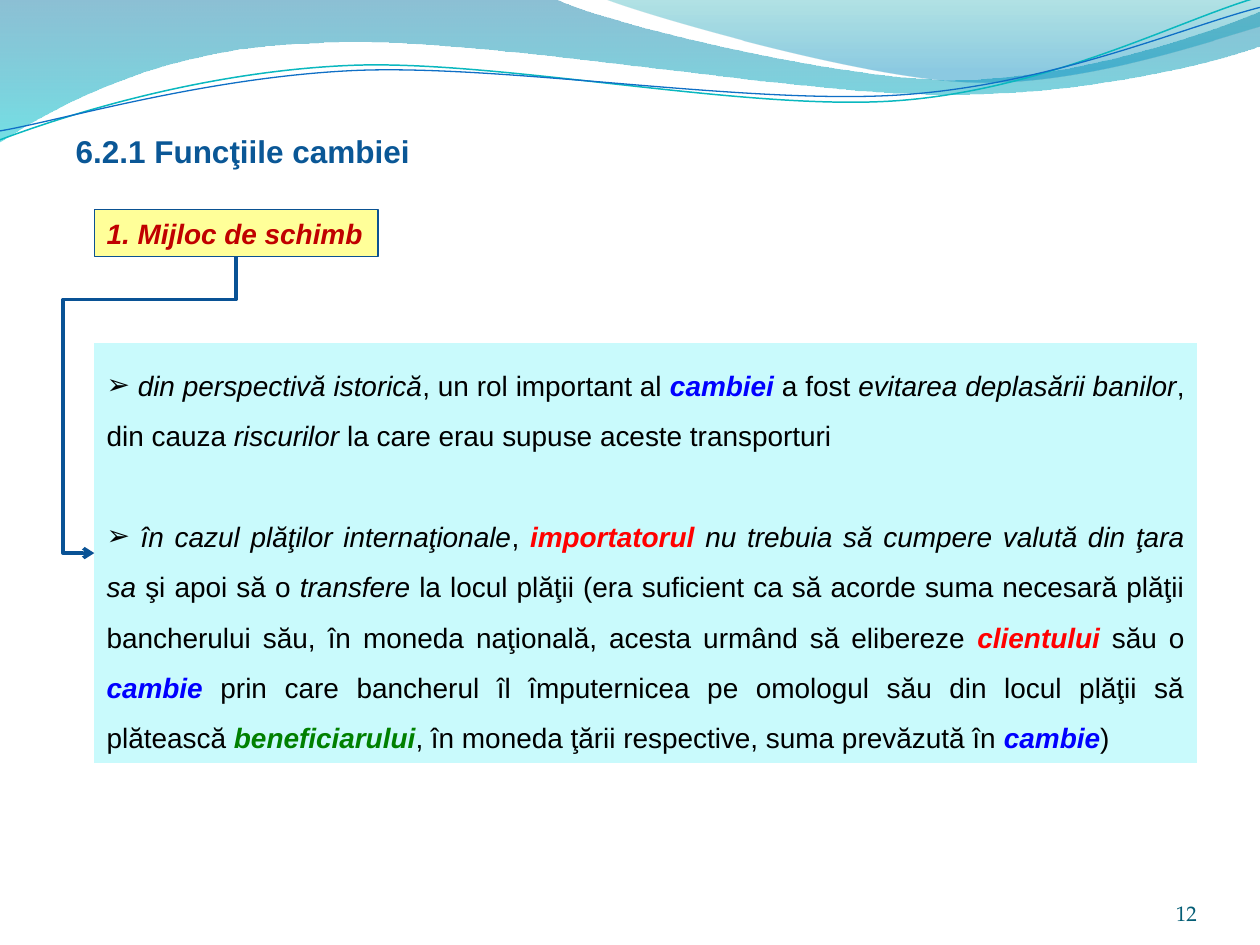
from lxml import etree
from pptx import Presentation
from pptx.dml.color import RGBColor
from pptx.enum.shapes import MSO_CONNECTOR, MSO_SHAPE
from pptx.enum.text import MSO_ANCHOR, MSO_AUTO_SIZE, PP_ALIGN
from pptx.oxml.ns import qn
from pptx.util import Cm, Pt

RECT, ELBOW = MSO_SHAPE.RECTANGLE, MSO_CONNECTOR.ELBOW
MIDDLE, BOTTOM = MSO_ANCHOR.MIDDLE, MSO_ANCHOR.BOTTOM
LEFT, RIGHT, JUSTIFY = PP_ALIGN.LEFT, PP_ALIGN.RIGHT, PP_ALIGN.JUSTIFY
GROW, FIXED = MSO_AUTO_SIZE.SHAPE_TO_FIT_TEXT, MSO_AUTO_SIZE.NONE

COLORS = {
    "title": "0A5796", "label": "C00000", "label_fill": "FFFF99", "label_line": "0B5292",
    "body_fill": "C9FAFC", "arrow": "095295", "number": "045D75", "black": "000000",
    "blue": "0000FF", "red": "FF0000", "green": "008000",
}

# Text styles: regular, italic, and bold italic in a colour
STYLES = {
    "plain": {"name": "Arial", "size": Pt(16), "bold": False, "italic": False, "color": "black"},
    "title": {"name": "Arial", "size": Pt(18), "bold": True, "italic": False, "color": "title"},
    "number": {"name": "TeX Gyre Pagella", "size": Pt(12), "color": "number"},
}
STYLES["italic"] = {**STYLES["plain"], "italic": True}
for accent in ("blue", "red", "green", "label"):
    STYLES[accent] = {**STYLES["italic"], "bold": True, "color": accent}

TITLE = [[("6.2.1 Funcţiile cambiei", "title")]]
LABEL = [[("1. Mijloc de schimb", "label")]]
NUMBER = [[("12", "number")]]
BODY = [
    [(" din perspectivă istorică", "italic"), (", un rol important al ", "plain"),
     ("cambiei", "blue"), (" a fost ", "plain"), ("evitarea deplasării banilor", "italic"),
     (", din cauza", "plain"), (" riscurilor", "italic"),
     (" la care erau supuse aceste transporturi", "plain")],
    [(" în cazul plăţilor internaţionale", "italic"), (", ", "plain"), ("importatorul ", "red"),
     ("nu trebuia să cumpere valută din ţara sa", "italic"), (" şi apoi să o ", "plain"),
     ("transfere", "italic"),
     (" la locul plăţii (era suficient ca să acorde suma necesară plăţii bancherului său, "
      "în moneda naţională, acesta urmând să elibereze ", "plain"),
     ("clientului", "red"), (" său o ", "plain"), ("cambie", "blue"),
     (" prin care bancherul îl împuternicea pe omologul său din locul plăţii "
      "să plătească ", "plain"),
     ("beneficiarului", "green"),
     (", în moneda ţării respective, suma prevăzută în ", "plain"),
     ("cambie", "blue"), (")", "plain")],
]

# Waves in cm: a pair is a straight step, six numbers are a Bézier step.
# Gradient stops are (position, colour, opacity in percent).
WAVES = [
    {"start": (0, 0), "stops": [(0, "0074A1", 45), (1, "00C6CF", 55)],
     "steps": [(11.18, -0.03), (12.09, 0.43, 16.87, 1.6, 19.25, 1.6),
               (21.67, 1.6, 24.33, 0.66, 25.4, 0.23), (25.43, 0.91),
               (24.97, 1.12, 22.1, 1.93, 18.95, 1.9), (15.8, 1.9, 9.7, 0.71, 6.53, 0.86),
               (3.28, 0.91, 1.17, 2.11, -0.03, 2.87), (0, 0)]},
    {"start": (12.17, -0.03), "stops": [(0, "00A1A9", 30), (0.8, "008BBF", 45)],
     "steps": [(12.93, 0.28, 17.32, 1.57, 19.53, 1.65),
               (21.74, 1.75, 24.41, 0.81, 25.4, 0.53), (25.4, 0), (12.17, -0.03)]},
    {"start": (0, 2.82), "line": ("0AB8BF", 0.85),
     "steps": [(1.22, 2.36, 4.01, 1.45, 7.04, 1.32), (10.03, 1.19, 15.06, 2.26, 18.11, 2.03),
               (21.16, 1.8, 23.83, 0.38, 25.35, -0.05)]},
    {"start": (0, 2.64), "line": ("0F6FC6", 0.75),
     "steps": [(1.19, 2.44, 4.17, 1.55, 7.19, 1.42), (10.24, 1.3, 15.16, 2.13, 18.21, 1.91),
               (21.23, 1.7, 23.9, 0.53, 25.4, 0.15)]},
]


def rgb(value):
    return RGBColor.from_string(COLORS.get(value, value))


def add_xml(parent, tag, **attributes):
    return etree.SubElement(parent, qn(tag), attributes)


def bend(shape, steps):
    """Join each three straight segments of a six-number step into one Bézier curve."""
    segments = iter(list(shape.element.iter(qn("a:lnTo"))))
    for step in steps:
        group = [next(segments) for _ in range(len(step) // 2)]
        if len(group) == 3:
            curve = etree.Element(qn("a:cubicBezTo"))
            group[0].addprevious(curve)
            for segment in group:
                curve.append(segment[0])
                segment.getparent().remove(segment)


def add_wave(page, wave):
    steps = wave["steps"]
    points = [(Cm(x), Cm(y)) for step in steps for x, y in zip(step[::2], step[1::2])]
    builder = page.shapes.build_freeform(*map(Cm, wave["start"]))
    builder.add_line_segments(points, close="stops" in wave)
    shape = builder.convert_to_shape()
    bend(shape, steps)
    shape.shadow.inherit = False
    if "line" in wave:
        color, width = wave["line"]
        shape.fill.background()
        shape.line.color.rgb = rgb(color)
        shape.line.width = Pt(width)
        return
    shape.line.fill.background()
    shape.fill.gradient()
    shape.fill.gradient_angle = 270
    for stop, (position, color, _) in zip(shape.fill.gradient_stops, wave["stops"]):
        stop.position = position
        stop.color.rgb = rgb(color)
    for node, (_, _, opacity) in zip(shape.element.iter(qn("a:srgbClr")), wave["stops"]):
        add_xml(node, "a:alpha", val=str(opacity * 1000))


def place(shape, box):
    shape.left, shape.top, shape.width, shape.height = map(Cm, box)


def write(shape, paragraphs, frame_format, para_format, bullet=None):
    frame = shape.text_frame
    for name, value in frame_format.items():
        setattr(frame, name, value)
    for index, spans in enumerate(paragraphs):
        para = frame.add_paragraph() if index else frame.paragraphs[0]
        for name, value in para_format.items():
            setattr(para, name, value)
        if index:
            para.space_before = Pt(28.8)
        if bullet:
            properties = para._p.get_or_add_pPr()
            add_xml(properties, "a:buFont", typeface="Arial")
            add_xml(properties, "a:buChar", char=bullet)
        for text, style in spans:
            span = para.add_run()
            span.text = text
            for name, value in STYLES[style].items():
                if name == "color":
                    span.font.color.rgb = rgb(value)
                else:
                    setattr(span.font, name, value)


def add_panel(page, box, fill, line=None):
    shape = page.shapes.add_shape(RECT, *map(Cm, box))
    shape.shadow.inherit = False
    shape.fill.solid()
    shape.fill.fore_color.rgb = rgb(fill)
    if line:
        shape.line.color.rgb = rgb(line)
        shape.line.width = Pt(0.75)
    else:
        shape.line.fill.background()
    return shape


def add_elbow(page, start, end, drop, lane):
    """Go down by drop, left to lane, down to the end's height, then right to it."""
    (x1, y1), (x2, y2) = start, end
    across, down = x1 - x2, y2 - y1
    left, top = (x1 + x2 - down) / 2, (y1 + y2 - across) / 2
    arrow = page.shapes.add_connector(ELBOW, *map(Cm, (left, top, left + down, top + across)))
    arrow.line.color.rgb = rgb("arrow")
    arrow.line.width = Pt(2)
    properties = arrow.element.spPr
    properties.find(qn("a:xfrm")).set("rot", str(90 * 60000))
    geometry = properties.find(qn("a:prstGeom"))
    geometry.set("prst", "bentConnector4")
    guides = geometry.find(qn("a:avLst"))
    for name, share in (("adj1", drop / down), ("adj2", (x1 - lane) / across)):
        add_xml(guides, "a:gd", name=name, fmla=f"val {round(share * 100000)}")
    add_xml(properties.find(qn("a:ln")), "a:tailEnd", type="arrow")
    add_xml(properties, "a:effectLst")


deck = Presentation()
deck.slide_width, deck.slide_height = Cm(25.4), Cm(19.05)
page = deck.slides.add_slide(deck.slide_layouts[5])

# Waves along the top
for wave in WAVES:
    add_wave(page, wave)

# Title, in front of the waves
title = page.shapes.title
title.element.getparent().append(title.element)
place(title, (1.27, 2.54, 7.37, 1.02))
write(title, TITLE, {"word_wrap": False, "auto_size": GROW, "vertical_anchor": MIDDLE},
      {"alignment": LEFT})

# Label, explanation and the arrow between them
panel_format = {"word_wrap": True, "auto_size": GROW, "vertical_anchor": MIDDLE}
label_box, body_box = (1.9, 4.23, 5.72, 0.94), (1.9, 6.92, 22.23, 8.46)
label = add_panel(page, label_box, "label_fill", "label_line")
write(label, LABEL, panel_format, {"alignment": JUSTIFY})
body = add_panel(page, body_box, "body_fill")
write(body, BODY, panel_format, {"alignment": JUSTIFY, "line_spacing": 1.5}, bullet="➢")
add_elbow(page, (label_box[0] + label_box[2] / 2, label_box[1] + label_box[3]),
          (body_box[0], body_box[1] + body_box[3] / 2), drop=0.87, lane=1.27)

# Page number
number = page.shapes.add_textbox(*map(Cm, (22.02, 17.65, 2.11, 1.02)))
margins = {f"margin_{side}": 0 for side in ("left", "top", "right", "bottom")}
write(number, NUMBER, {**margins, "word_wrap": True, "auto_size": FIXED,
                       "vertical_anchor": BOTTOM}, {"alignment": RIGHT})

deck.save("out.pptx")
